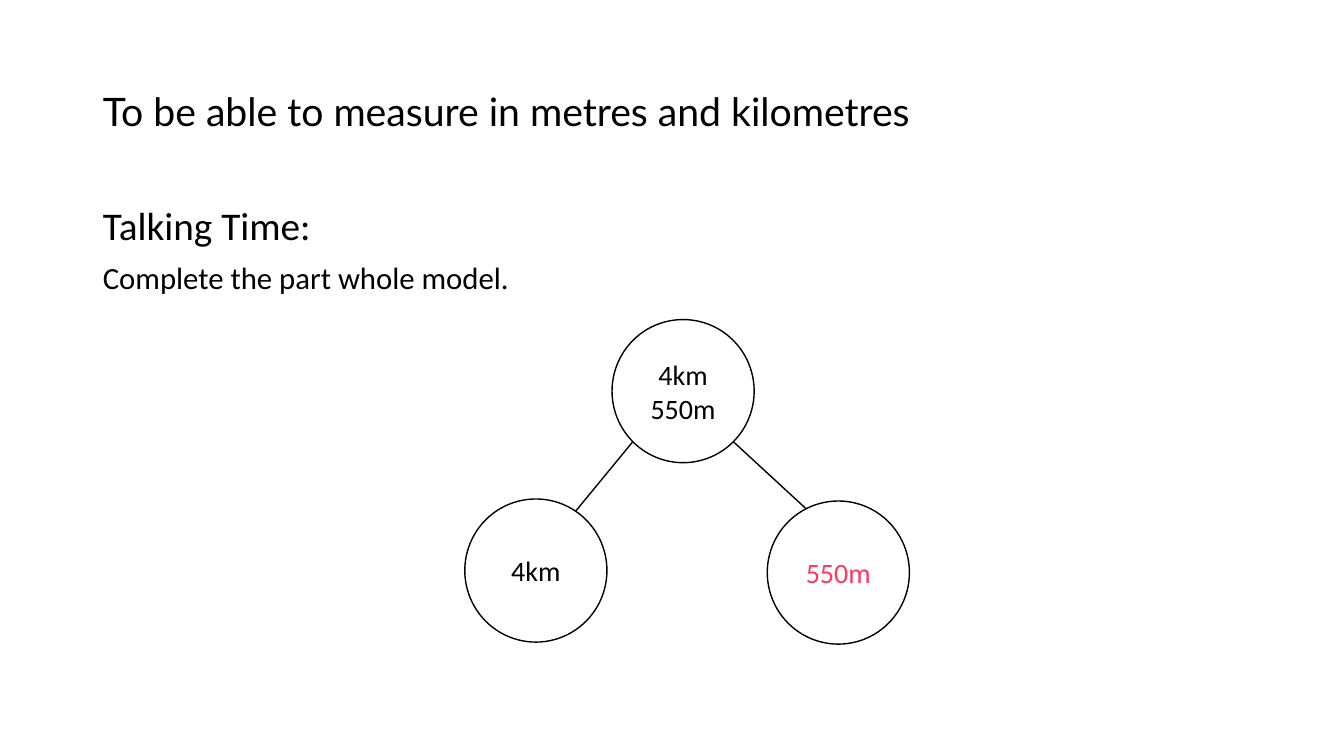
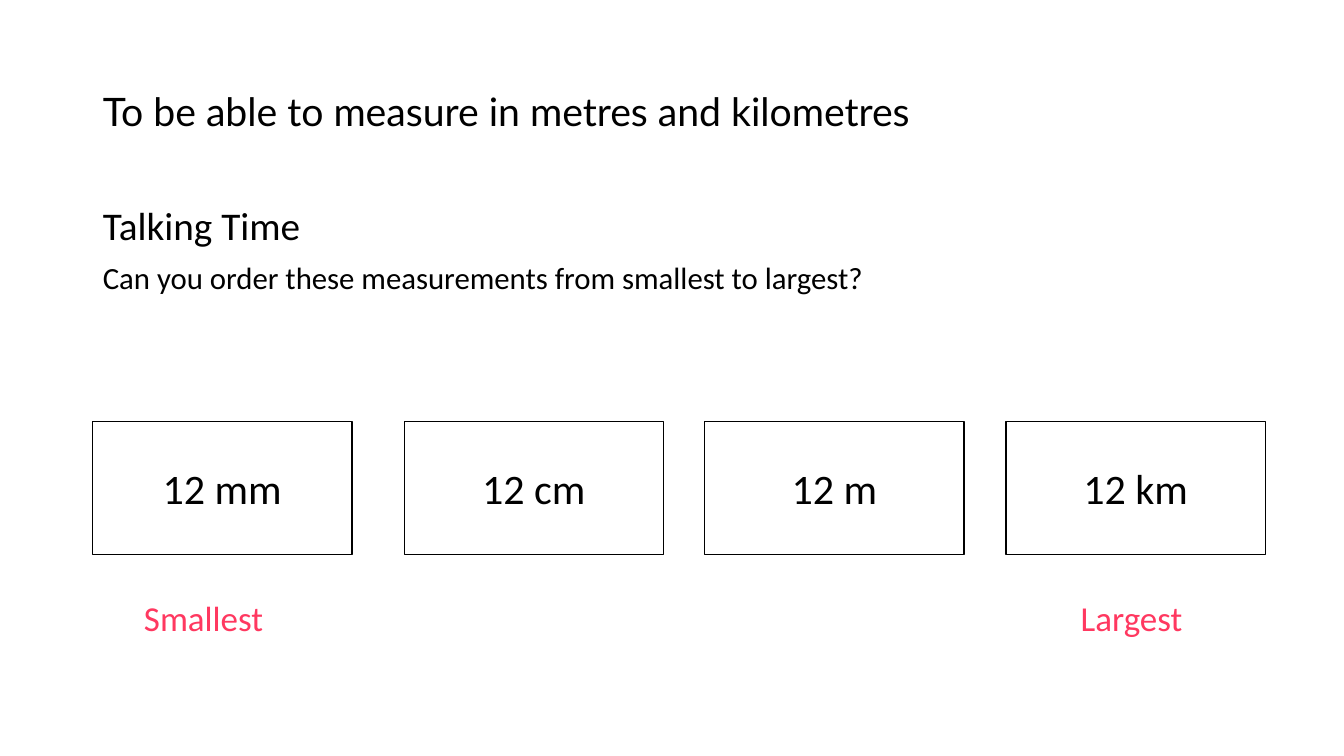
"""Builds two maths talking-time slides: a part whole model and an ordering task."""
from dataclasses import dataclass
from math import cos, radians, sin

from lxml.etree import SubElement
from pptx import Presentation
from pptx.dml.color import RGBColor
from pptx.enum.shapes import MSO_CONNECTOR, MSO_SHAPE
from pptx.enum.text import MSO_ANCHOR, MSO_AUTO_SIZE, PP_ALIGN
from pptx.oxml.ns import qn
from pptx.util import Inches, Pt


@dataclass(frozen=True)
class Theme:
    """Holds the shared colours, fonts, sizes and placeholder areas."""
    ink: RGBColor = RGBColor(0, 0, 0)
    paper: RGBColor = RGBColor(255, 255, 255)
    answer: RGBColor = RGBColor(0xFF, 0x38, 0x60)
    title_font: str = "Lato"
    body_font: str = "Calibri"
    heading_size: int = 28
    task_size: int = 22
    circle_size: int = 20
    card_size: int = 30
    label_size: int = 25
    outline: int = 1
    title_area: tuple = (0.92, 0.4, 9.6, 1.45)
    body_area: tuple = (0.92, 2, 11.5, 4.76)


THEME = Theme()
TITLE = "To be able to measure in metres and kilometres"

PART_WHOLE = ("Talking Time:", "Complete the part whole model.")
CIRCLE_WIDTH, CIRCLE_HEIGHT = 1.41, 1.42
WHOLE = ("4km 550m", 6.07, 3.17)
PARTS = [
    {"text": "4km", "at": (4.61, 4.95), "color": THEME.ink, "leave": 135, "arrive": -56},
    {"text": "550m", "at": (7.61, 4.97), "color": THEME.answer, "leave": 45, "arrive": -117},
]

ORDERING = ("Talking Time", "Can you order these measurements from smallest to largest?")
CARD_TOP, CARD_WIDTH, CARD_HEIGHT = 4.18, 2.57, 1.32
CARDS = [("12 mm", 0.92), ("12 cm", 4.01), ("12 m", 6.99), ("12 km", 9.98)]
LABEL_TOP, LABEL_WIDTH, LABEL_HEIGHT = 5.87, 1.74, 0.52
LABELS = [("Smallest", 1.33), ("Largest", 10.62)]


def write(frame, lines, sizes, font=THEME.body_font, color=THEME.ink,
          align=PP_ALIGN.LEFT, anchor=MSO_ANCHOR.TOP, spacing=1.0, gap=0, plain=False):
    """Fills a text frame with one formatted paragraph for each line."""
    frame.word_wrap = True
    frame.auto_size = MSO_AUTO_SIZE.NONE
    frame.vertical_anchor = anchor
    for index, (line, size) in enumerate(zip(lines, sizes)):
        paragraph = frame.add_paragraph() if index else frame.paragraphs[0]
        paragraph.text = line
        paragraph.alignment = align
        paragraph.line_spacing = spacing
        paragraph.space_before = Pt(gap if index else 0)
        if plain:
            properties = paragraph._p.get_or_add_pPr()
            properties.set("marL", "0")
            properties.set("indent", "0")
            SubElement(properties, qn("a:buNone"))
        paragraph.font.name = font
        paragraph.font.size = Pt(size)
        paragraph.font.color.rgb = color


def place_placeholders(layout):
    """Moves the title and body areas that every slide inherits."""
    areas = (THEME.title_area, THEME.body_area)
    for placeholder, area in zip(layout.placeholders, areas):
        placeholder.left, placeholder.top, placeholder.width, placeholder.height = map(Inches, area)


def add_task_slide(presentation, lines):
    """Adds a slide with the shared title, a heading and a task."""
    slide = presentation.slides.add_slide(presentation.slide_layouts[1])
    write(slide.shapes.title.text_frame, [TITLE], [THEME.heading_size], font=THEME.title_font,
          anchor=MSO_ANCHOR.MIDDLE, spacing=0.9)
    write(slide.placeholders[1].text_frame, lines, [THEME.heading_size, THEME.task_size],
          spacing=0.9, gap=10, plain=True)
    return slide


def add_outlined(slide, kind, text, area, size, color=THEME.ink):
    """Adds a white outlined shape with centred text."""
    shape = slide.shapes.add_shape(kind, *map(Inches, area))
    shape.shadow.inherit = False
    shape.fill.solid()
    shape.fill.fore_color.rgb = THEME.paper
    shape.line.color.rgb = THEME.ink
    shape.line.width = Pt(THEME.outline)
    write(shape.text_frame, [text], [size], color=color,
          align=PP_ALIGN.CENTER, anchor=MSO_ANCHOR.MIDDLE)


def add_circle(slide, text, left, top, color=THEME.ink):
    """Adds one circle of the part whole model."""
    add_outlined(slide, MSO_SHAPE.OVAL, text, (left, top, CIRCLE_WIDTH, CIRCLE_HEIGHT),
                 THEME.circle_size, color)


def rim_point(left, top, angle):
    """Returns the point on a circle's rim, with the angle clockwise from the right."""
    return (left + CIRCLE_WIDTH / 2 * (1 + cos(radians(angle))),
            top + CIRCLE_HEIGHT / 2 * (1 + sin(radians(angle))))


def add_link(slide, start, end):
    """Adds a plain straight line between two points."""
    link = slide.shapes.add_connector(MSO_CONNECTOR.STRAIGHT, *map(Inches, start + end))
    link.line.color.rgb = THEME.ink
    link.line.width = Pt(THEME.outline)
    SubElement(link._element.spPr, qn("a:effectLst"))


def build_part_whole(presentation):
    """Builds the part whole model slide."""
    slide = add_task_slide(presentation, PART_WHOLE)
    add_circle(slide, *WHOLE)
    for part in PARTS:
        add_circle(slide, part["text"], *part["at"], color=part["color"])
        add_link(slide, rim_point(*WHOLE[1:], part["leave"]),
                 rim_point(*part["at"], part["arrive"]))


def build_ordering(presentation):
    """Builds the slide that orders measurements."""
    slide = add_task_slide(presentation, ORDERING)
    for text, left in CARDS:
        add_outlined(slide, MSO_SHAPE.RECTANGLE, text,
                     (left, CARD_TOP, CARD_WIDTH, CARD_HEIGHT), THEME.card_size)
    for text, left in LABELS:
        area = (left, LABEL_TOP, LABEL_WIDTH, LABEL_HEIGHT)
        label = slide.shapes.add_textbox(*map(Inches, area))
        write(label.text_frame, [text], [THEME.label_size], color=THEME.answer)


def main():
    """Builds and saves the presentation."""
    presentation = Presentation()
    presentation.slide_width, presentation.slide_height = Inches(13.33), Inches(7.5)
    place_placeholders(presentation.slide_layouts[1])
    build_part_whole(presentation)
    build_ordering(presentation)
    presentation.save("out.pptx")


if __name__ == "__main__":
    main()
